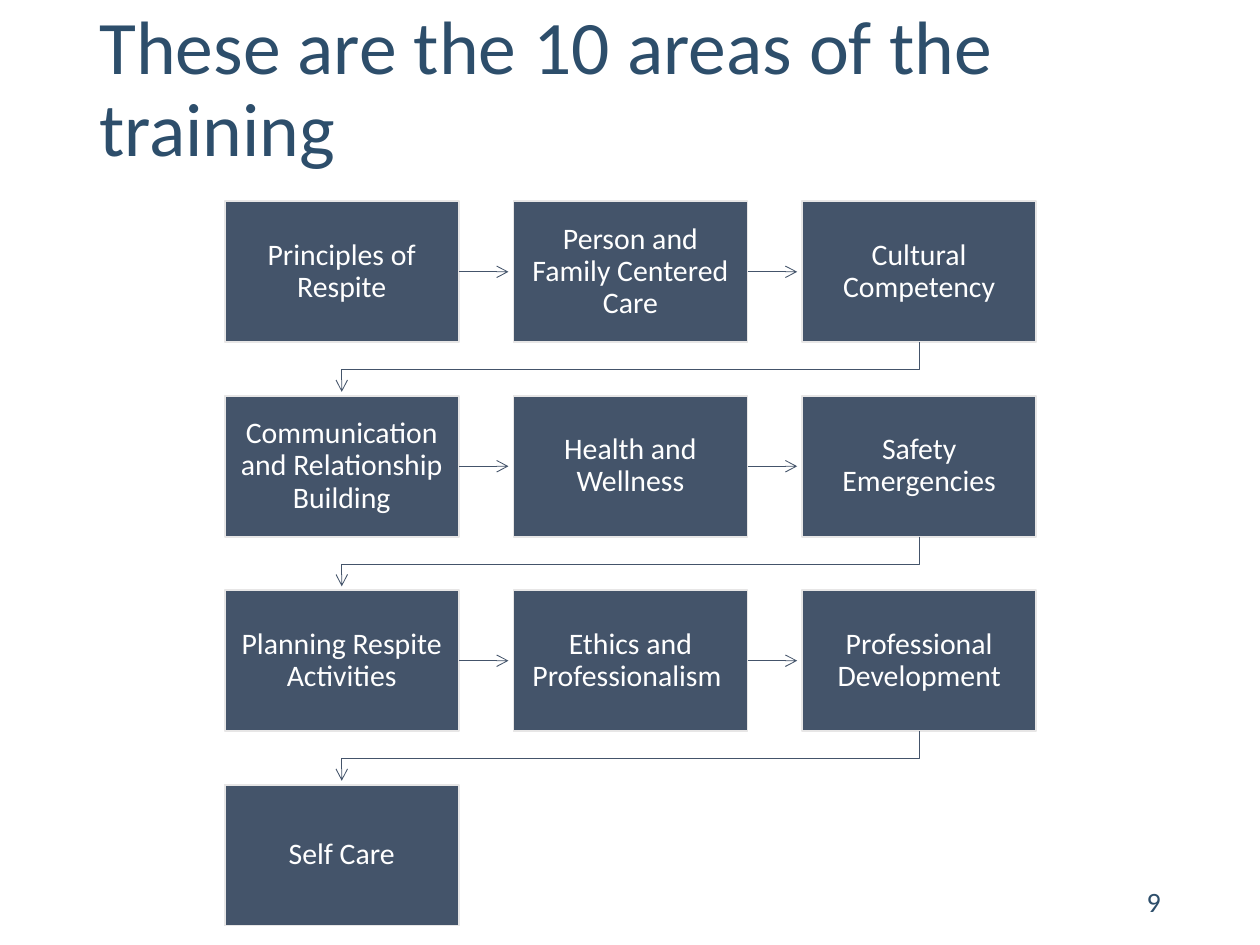
from lxml.etree import SubElement
from pptx import Presentation
from pptx.dml.color import RGBColor
from pptx.enum.shapes import MSO_CONNECTOR, MSO_SHAPE
from pptx.enum.text import MSO_ANCHOR, MSO_AUTO_SIZE, PP_ALIGN
from pptx.oxml.ns import qn
from pptx.util import Cm, Pt

COLORS = {"ink": "2D4E6B", "box": "44546A", "border": "E7E6E6", "label": "FFFFFF"}
FONT = "Calibri"
AREAS = [
    "Principles of Respite",
    "Person and Family Centered Care",
    "Cultural Competency",
    "Communication and Relationship Building",
    "Health and Wellness",
    "Safety Emergencies",
    "Planning Respite Activities",
    "Ethics and Professionalism ",
    "Professional Development",
    "Self Care",
]
COLUMNS = 3
GRID_LEFT, GRID_TOP = Cm(4.53), Cm(4.06)
BOX_WIDTH, BOX_HEIGHT = Cm(4.72), Cm(2.84)
PITCH_X, PITCH_Y = Cm(5.82), Cm(3.92)
ARROW_LENGTH, TURN_DROP = Cm(1), Cm(0.55)


def color(name):
    """Return the named palette colour."""
    return RGBColor.from_string(COLORS[name])


def write(frame, text, size, color_name, align, line_spacing=1.0):
    """Write one formatted run, centred vertically in the frame."""
    frame.word_wrap = True
    frame.auto_size = MSO_AUTO_SIZE.NONE
    frame.vertical_anchor = MSO_ANCHOR.MIDDLE
    paragraph = frame.paragraphs[0]
    paragraph.alignment = align
    paragraph.line_spacing = line_spacing
    run = paragraph.add_run()
    run.text = text
    run.font.name = FONT
    run.font.size = Pt(size)
    run.font.color.rgb = color(color_name)


def add_title(slide, text):
    """Place and fill the title placeholder."""
    title = slide.shapes.title
    title.left, title.top, title.width, title.height = Cm(1.75), Cm(0), Cm(21.9), Cm(3.68)
    write(title.text_frame, text, 43.2, "ink", PP_ALIGN.LEFT, 0.9)


def add_area(slide, index, text):
    """Add the box of one training area at its place in the grid."""
    row, column = divmod(index, COLUMNS)
    area = slide.shapes.add_shape(
        MSO_SHAPE.RECTANGLE, GRID_LEFT + column * PITCH_X, GRID_TOP + row * PITCH_Y,
        BOX_WIDTH, BOX_HEIGHT)
    area.shadow.inherit = False
    area.fill.solid()
    area.fill.fore_color.rgb = color("box")
    area.line.color.rgb = color("border")
    area.line.width = Pt(1)
    frame = area.text_frame
    frame.margin_left = frame.margin_right = Cm(0.23)
    frame.margin_top = frame.margin_bottom = Cm(0.25)
    write(frame, text, 17, "label", PP_ALIGN.CENTER, 0.9)
    return area


def style_arrow(line):
    """Make a line thin and end it with an open arrowhead."""
    line.color.rgb = color("box")
    line.width = Pt(0.5)
    SubElement(line._get_or_add_ln(), qn("a:tailEnd"), type="arrow")


def add_step_arrow(slide, source):
    """Point from a box towards its right neighbour."""
    x, y = source.left + source.width, source.top + source.height // 2
    arrow = slide.shapes.add_connector(MSO_CONNECTOR.STRAIGHT, x, y, x + ARROW_LENGTH, y)
    arrow.begin_connect(source, 3)
    style_arrow(arrow.line)
    SubElement(arrow._element.spPr, qn("a:effectLst"))


def add_turn_arrow(slide, source, target):
    """Lead from the end of a row back to the start of the next."""
    start_x, end_x = (box.left + box.width // 2 for box in (source, target))
    y = source.top + source.height
    builder = slide.shapes.build_freeform(start_x, y)
    builder.add_line_segments(
        [(start_x, y + TURN_DROP), (end_x, y + TURN_DROP), (end_x, y + ARROW_LENGTH)],
        close=False)
    arrow = builder.convert_to_shape()
    arrow.shadow.inherit = False
    arrow.fill.background()
    style_arrow(arrow.line)


def add_page_number(slide, number):
    """Add the page number at the bottom right."""
    box = slide.shapes.add_textbox(Cm(17.93), Cm(17.65), Cm(5.72), Cm(1.02))
    write(box.text_frame, number, 16, "ink", PP_ALIGN.RIGHT)


def main():
    """Build and save the slide."""
    presentation = Presentation()
    presentation.slide_width, presentation.slide_height = Cm(25.4), Cm(19.05)
    slide = presentation.slides.add_slide(presentation.slide_layouts[5])
    add_title(slide, "These are the 10 areas of the training")
    areas = [add_area(slide, index, text) for index, text in enumerate(AREAS)]
    for source, target in zip(areas, areas[1:]):
        if source.top == target.top:
            add_step_arrow(slide, source)
        else:
            add_turn_arrow(slide, source, target)
    add_page_number(slide, "9")
    presentation.save("out.pptx")


if __name__ == "__main__":
    main()
